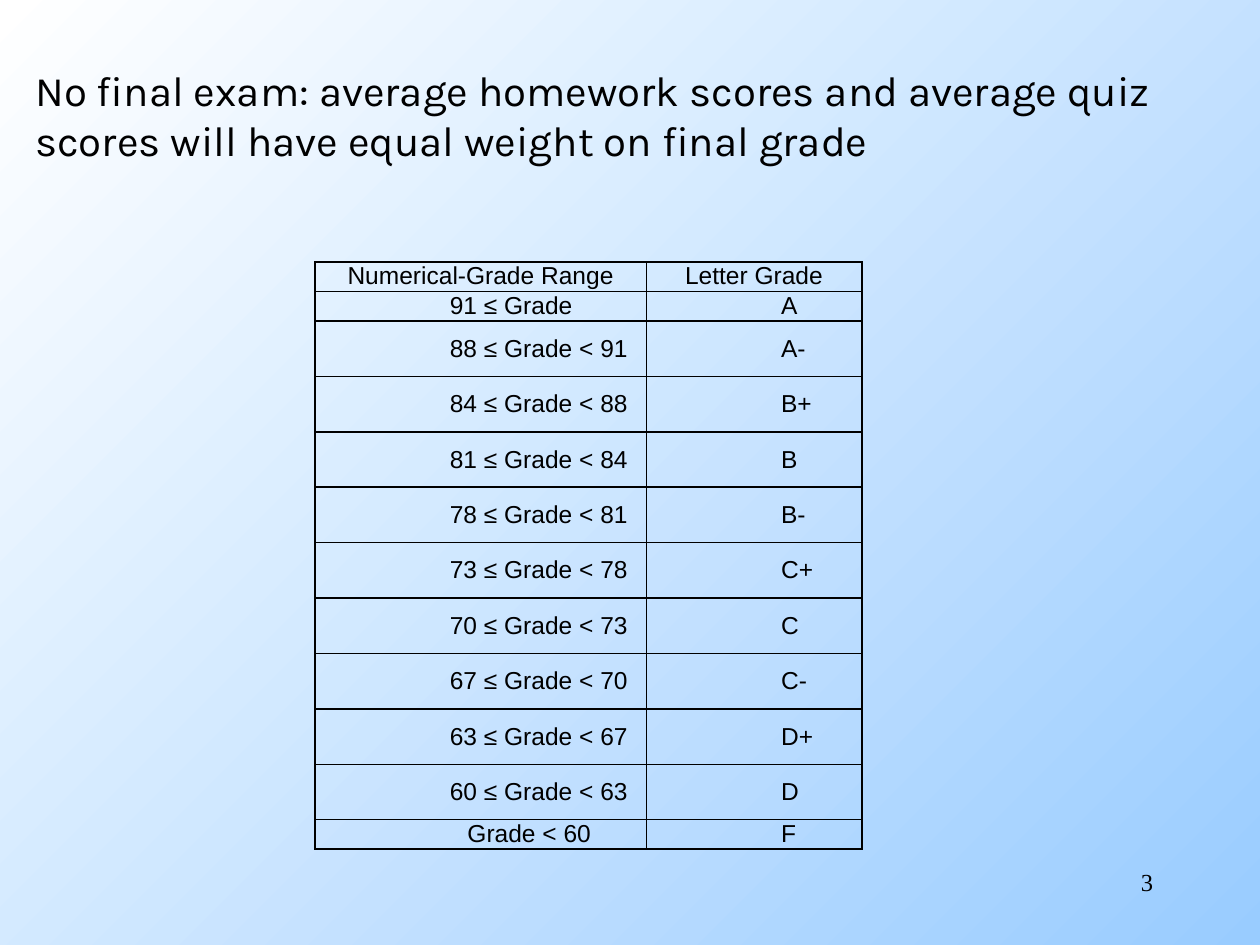
from typing import Any, NamedTuple

from lxml import etree
from pptx import Presentation
from pptx.dml.color import RGBColor
from pptx.enum.text import MSO_ANCHOR, MSO_AUTO_SIZE, PP_ALIGN
from pptx.oxml.ns import qn
from pptx.util import Inches, Pt

LEFT, CENTER, RIGHT = PP_ALIGN.LEFT, PP_ALIGN.CENTER, PP_ALIGN.RIGHT
TOP, MIDDLE = MSO_ANCHOR.TOP, MSO_ANCHOR.MIDDLE
FIT_SHAPE = MSO_AUTO_SIZE.SHAPE_TO_FIT_TEXT
TITLE_ONLY = 5
BLACK, WHITE, SKY = "000000", "FFFFFF", "99CCFF"

CELL_MARGIN = 0.07
ENTRY_INDENT = 1.07
LAST_INDENT = 1.21
SHORT_ROW, TALL_ROW = 0.22, 0.44
COLUMN_WIDTHS = (2.63, 1.71)


class GradeRow(NamedTuple):
    score_range: str
    letter: str
    height: float = TALL_ROW
    indent: float = ENTRY_INDENT


HEADER = ("Numerical-Grade Range", "Letter Grade")
GRADES = [
    GradeRow("91 ≤ Grade", "A", SHORT_ROW),
    GradeRow("88 ≤ Grade < 91", "A-"),
    GradeRow("84 ≤ Grade < 88", "B+"),
    GradeRow("81 ≤ Grade < 84", "B"),
    GradeRow("78 ≤ Grade < 81", "B-"),
    GradeRow("73 ≤ Grade < 78", "C+"),
    GradeRow("70 ≤ Grade < 73", "C"),
    GradeRow("67 ≤ Grade < 70", "C-"),
    GradeRow("63 ≤ Grade < 67", "D+"),
    GradeRow("60 ≤ Grade < 63", "D"),
    GradeRow("Grade < 60", "F", SHORT_ROW, LAST_INDENT),
]


def color(hex_value: str) -> RGBColor:
    return RGBColor.from_string(hex_value)


def set_format(target: Any, values: dict[str, Any]) -> None:
    for name, value in values.items():
        setattr(target, name, value)


def write_text(frame: Any, text: str, font: str, size: float, align: Any) -> None:
    paragraph = frame.paragraphs[0]
    paragraph.alignment = align
    run = paragraph.add_run()
    run.text = text
    set_format(run.font, {"name": font, "size": Pt(size)})
    run.font.color.rgb = color(BLACK)


def add_borders(cell: Any, hex_value: str, width: float) -> None:
    properties = cell._tc.get_or_add_tcPr()
    for side in ("lnL", "lnR", "lnT", "lnB"):
        line = etree.SubElement(properties, qn(f"a:{side}"), w=str(Pt(width)))
        fill = etree.SubElement(line, qn("a:solidFill"))
        etree.SubElement(fill, qn("a:srgbClr"), val=hex_value)


def fill_cell(cell: Any, text: str, align: Any, anchor: Any, indent: float) -> None:
    set_format(cell, {
        "margin_left": Inches(indent), "margin_right": Inches(CELL_MARGIN),
        "margin_top": 0, "margin_bottom": 0, "vertical_anchor": anchor,
    })
    write_text(cell.text_frame, text, "Arial", 14, align)
    add_borders(cell, BLACK, 1)
    cell.fill.background()


def add_background(slide: Any) -> None:
    fill = slide.background.fill
    fill.gradient()
    fill.gradient_angle = 315
    for stop, hex_value in zip(fill.gradient_stops, (WHITE, SKY)):
        stop.color.rgb = color(hex_value)


def add_title(slide: Any, text: str) -> None:
    title = slide.shapes.title
    set_format(title, {"left": Inches(0.18), "top": Inches(0.46),
                       "width": Inches(9.73), "height": Inches(0.91)})
    set_format(title.text_frame, {"word_wrap": True, "auto_size": FIT_SHAPE,
                                  "vertical_anchor": TOP})
    write_text(title.text_frame, text, "Karla", 24, LEFT)


def add_grade_table(slide: Any) -> None:
    heights = [SHORT_ROW] + [grade.height for grade in GRADES]
    table = slide.shapes.add_table(
        len(heights), len(COLUMN_WIDTHS), Inches(2.5), Inches(2.08),
        Inches(sum(COLUMN_WIDTHS)), Inches(sum(heights))).table
    for column, width in zip(table.columns, COLUMN_WIDTHS):
        column.width = Inches(width)
    for row, height in zip(table.rows, heights):
        row.height = Inches(height)

    for index, heading in enumerate(HEADER):
        fill_cell(table.cell(0, index), heading, CENTER, TOP, CELL_MARGIN)
    for index, grade in enumerate(GRADES, start=1):
        fill_cell(table.cell(index, 0), grade.score_range, LEFT, MIDDLE, grade.indent)
        fill_cell(table.cell(index, 1), grade.letter, LEFT, MIDDLE, ENTRY_INDENT)


def add_page_number(slide: Any, number: str) -> None:
    box = slide.shapes.add_textbox(Inches(7.17), Inches(6.83), Inches(2.08), Inches(0.5))
    box.text_frame.word_wrap = True
    write_text(box.text_frame, number, "Times New Roman", 14, RIGHT)


def main() -> None:
    presentation = Presentation()
    set_format(presentation, {"slide_width": Inches(10), "slide_height": Inches(7.5)})
    slide = presentation.slides.add_slide(presentation.slide_layouts[TITLE_ONLY])

    add_background(slide)
    add_title(slide, "No final exam: average homework scores and average quiz "
                     "scores will have equal weight on final grade")
    add_grade_table(slide)
    add_page_number(slide, "3")
    presentation.save("out.pptx")


if __name__ == "__main__":
    main()
